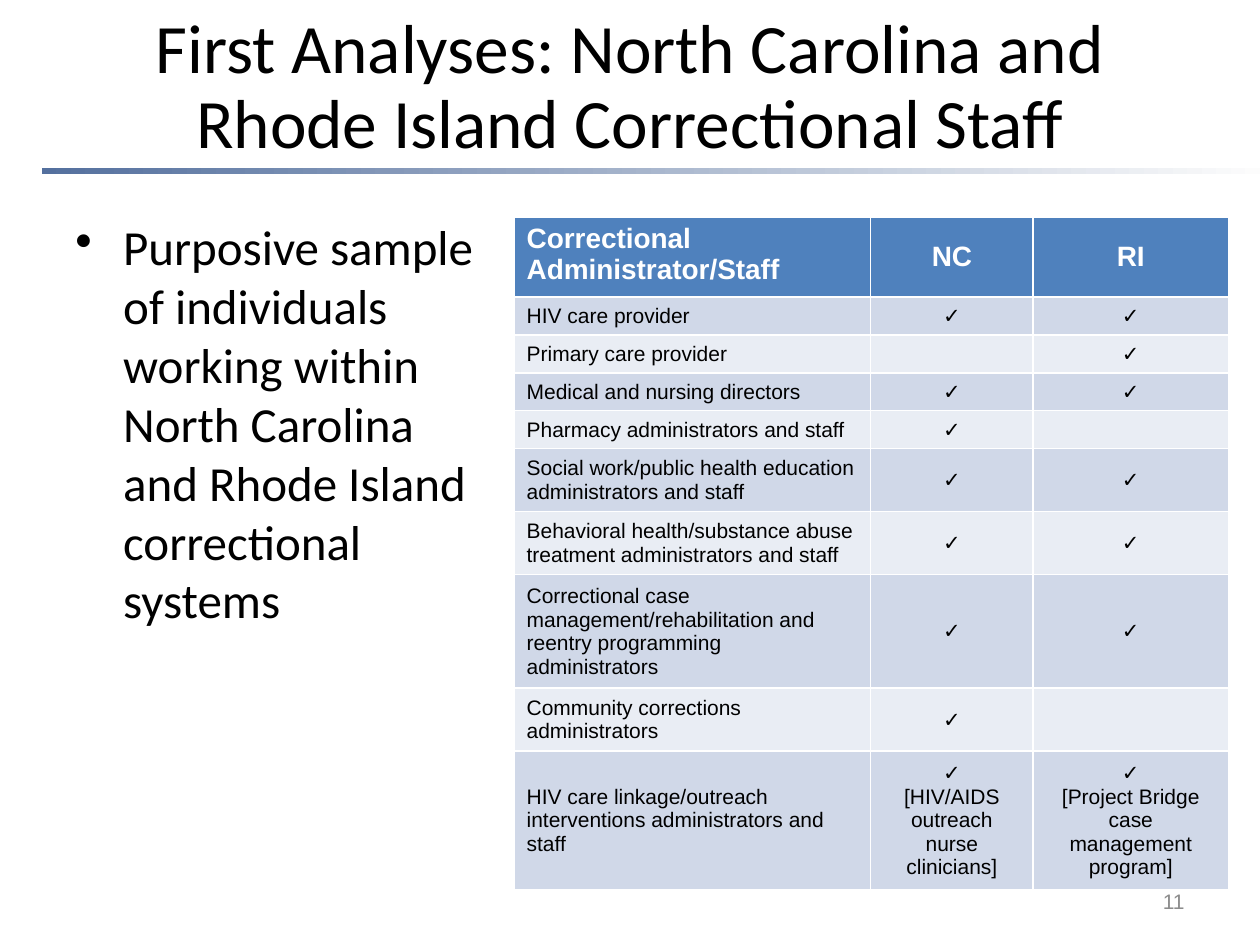
from dataclasses import dataclass
from typing import NamedTuple

import lxml.etree
import pptx
import pptx.dml.color
import pptx.enum.shapes
import pptx.enum.text
import pptx.oxml.ns
import pptx.util

ALIGN = pptx.enum.text.PP_ALIGN
ANCHOR = pptx.enum.text.MSO_ANCHOR
SLIDE_WIDTH = pptx.util.Inches(10)
SLIDE_HEIGHT = pptx.util.Inches(7.5)


@dataclass(frozen=True)
class Theme:
    heading_font: str = "Calibri"
    table_font: str = "Arial"
    ink: str = "000000"
    header_ink: str = "FFFFFF"
    number_ink: str = "8C8C8C"
    header_fill: str = "4F81BD"
    bands: tuple[str, str] = ("D0D8E8", "E9EDF4")
    rule_ends: tuple[str, str] = ("54709E", "FCFCFC")
    title_size: float = 39.6
    body_size: float = 28
    header_size: float = 16
    cell_size: float = 12


class Area(NamedTuple):
    left: float
    top: float
    width: float
    height: float

    def lengths(self) -> tuple[int, int, int, int]:
        return (
            round(self.left * SLIDE_WIDTH),
            round(self.top * SLIDE_HEIGHT),
            round(self.width * SLIDE_WIDTH),
            round(self.height * SLIDE_HEIGHT),
        )


class StaffRole(NamedTuple):
    role: str
    nc: str
    ri: str
    height: float = 0.3


THEME = Theme()
CHECK = "✓"
TITLE_AREA = Area(0.05, 0.01, 0.9, 0.167)
RULE_AREA = Area(0.033, 0.178, 0.967, 0.006)
SAMPLE_AREA = Area(0.05, 0.223, 0.35, 0.66)
TABLE_AREA = Area(0.408, 0.23, 0.567, 0.63)
NUMBER_AREA = Area(0.717, 0.927, 0.233, 0.053)
COLUMN_WIDTHS = (2.83, 1.29, 1.55)
STAFF = (
    StaffRole("Correctional Administrator/Staff", "NC", "RI", 0.63),
    StaffRole("HIV care provider", CHECK, CHECK),
    StaffRole("Primary care provider", "", CHECK),
    StaffRole("Medical and nursing directors", CHECK, CHECK),
    StaffRole("Pharmacy administrators and staff", CHECK, ""),
    StaffRole("Social work/public health education administrators and staff", CHECK, CHECK, 0.5),
    StaffRole("Behavioral health/substance abuse treatment administrators and staff", CHECK, CHECK, 0.5),
    StaffRole(
        "Correctional case management/rehabilitation and reentry programming administrators",
        CHECK, CHECK, 0.7,
    ),
    StaffRole("Community corrections administrators", CHECK, ""),
    StaffRole(
        "HIV care linkage/outreach interventions administrators and staff",
        f"{CHECK}\n[HIV/AIDS outreach nurse clinicians]",
        f"{CHECK}\n[Project Bridge case management program]",
        0.9,
    ),
)


def rgb(value: str) -> pptx.dml.color.RGBColor:
    return pptx.dml.color.RGBColor.from_string(value)


def write(frame, text: str, *, font: str, size: float, color: str = THEME.ink,
          bold: bool = False, align=ALIGN.LEFT, anchor=ANCHOR.MIDDLE,
          spacing: float = 1.0, bullet: str = "") -> None:
    frame.word_wrap = True
    frame.vertical_anchor = anchor
    for index, line in enumerate(text.split("\n")):
        paragraph = frame.paragraphs[0] if index == 0 else frame.add_paragraph()
        paragraph.alignment = align
        paragraph.line_spacing = spacing
        if bullet:
            properties = paragraph._p.get_or_add_pPr()
            indent = pptx.util.Inches(0.38)
            properties.set("marL", str(indent))
            properties.set("indent", str(-indent))
            mark = lxml.etree.SubElement(properties, pptx.oxml.ns.qn("a:buChar"))
            mark.set("char", bullet)
        if not line:
            ending = lxml.etree.SubElement(paragraph._p, pptx.oxml.ns.qn("a:endParaRPr"))
            ending.set("sz", str(round(size * 100)))
            continue
        run = paragraph.add_run()
        run.text = line
        run.font.name = font
        run.font.size = pptx.util.Pt(size)
        run.font.bold = bold
        run.font.color.rgb = rgb(color)


def add_title(slide) -> None:
    title = slide.shapes.title
    title.left, title.top, title.width, title.height = TITLE_AREA.lengths()
    write(title.text_frame, "First Analyses: North Carolina and Rhode Island Correctional Staff",
          font=THEME.heading_font, size=THEME.title_size, align=ALIGN.CENTER, spacing=0.9)


def add_rule(slide) -> None:
    rule = slide.shapes.add_shape(pptx.enum.shapes.MSO_SHAPE.RECTANGLE, *RULE_AREA.lengths())
    rule.shadow.inherit = False
    rule.line.fill.background()
    rule.fill.gradient()
    rule.fill.gradient_angle = 0
    for stop, color in zip(rule.fill.gradient_stops, THEME.rule_ends):
        stop.color.rgb = rgb(color)


def add_staff_table(slide) -> None:
    table = slide.shapes.add_table(len(STAFF), len(COLUMN_WIDTHS), *TABLE_AREA.lengths()).table
    for column, width in zip(table.columns, COLUMN_WIDTHS):
        column.width = pptx.util.Inches(width)
    for row, staff in enumerate(STAFF):
        header = row == 0
        table.rows[row].height = pptx.util.Inches(staff.height)
        for column, text in enumerate((staff.role, staff.nc, staff.ri)):
            cell = table.cell(row, column)
            cell.fill.solid()
            cell.fill.fore_color.rgb = rgb(THEME.header_fill if header else THEME.bands[(row - 1) % 2])
            write(cell.text_frame, text, font=THEME.table_font,
                  size=THEME.header_size if header else THEME.cell_size,
                  color=THEME.header_ink if header else THEME.ink, bold=header,
                  align=ALIGN.CENTER if column else ALIGN.LEFT)
            cell.vertical_anchor = ANCHOR.TOP if header and column == 0 else ANCHOR.MIDDLE


def main() -> None:
    deck = pptx.Presentation()
    deck.slide_width, deck.slide_height = SLIDE_WIDTH, SLIDE_HEIGHT
    slide = deck.slides.add_slide(deck.slide_layouts.get_by_name("Title Only"))
    add_rule(slide)
    add_title(slide)
    sample = slide.shapes.add_textbox(*SAMPLE_AREA.lengths())
    write(sample.text_frame,
          "Purposive sample of individuals working within North Carolina "
          "and Rhode Island correctional systems",
          font=THEME.heading_font, size=THEME.body_size, anchor=ANCHOR.TOP, bullet="•")
    add_staff_table(slide)
    number = slide.shapes.add_textbox(*NUMBER_AREA.lengths())
    write(number.text_frame, "11", font=THEME.table_font, size=THEME.cell_size,
          color=THEME.number_ink, align=ALIGN.RIGHT)
    deck.save("out.pptx")


if __name__ == "__main__":
    main()
